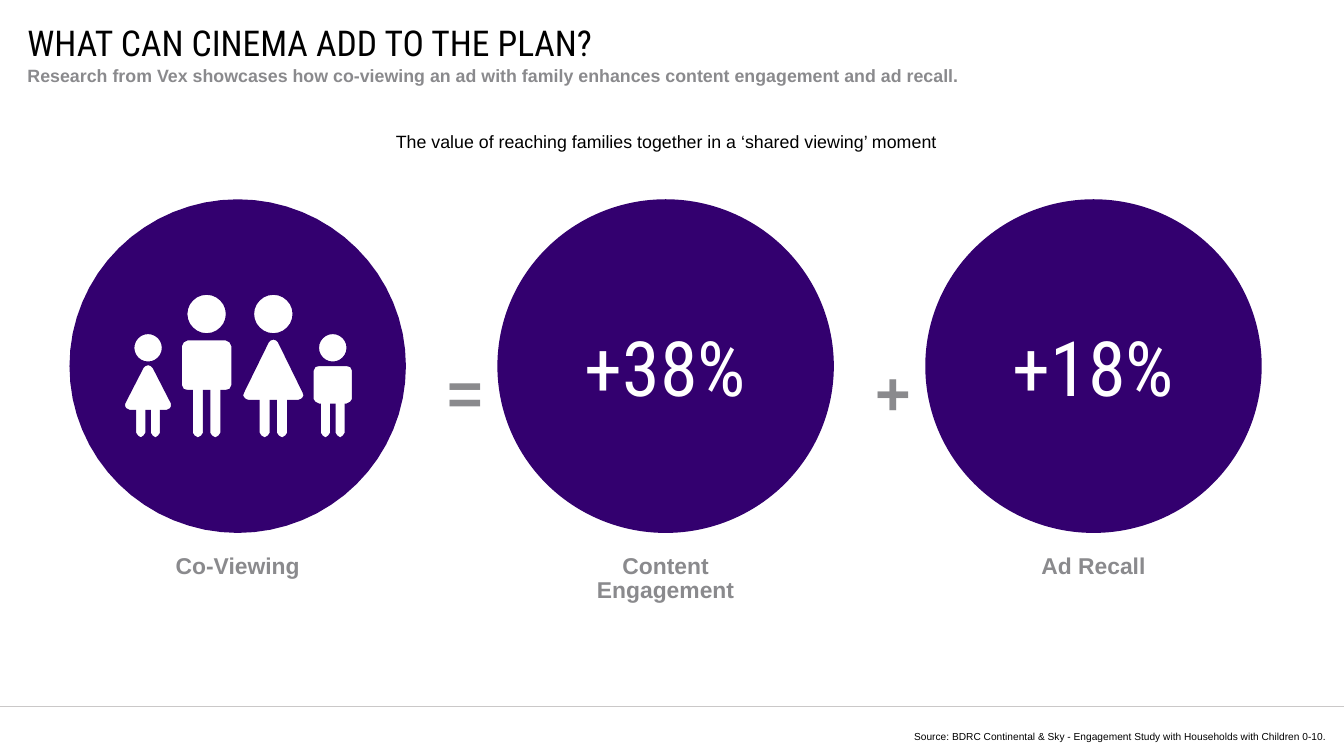
from dataclasses import dataclass
from math import cos, pi, sin

from lxml import etree
from pptx import Presentation
from pptx.dml.color import RGBColor
from pptx.enum.shapes import MSO_CONNECTOR, MSO_SHAPE
from pptx.enum.text import MSO_ANCHOR, MSO_AUTO_SIZE, PP_ALIGN
from pptx.oxml.ns import qn
from pptx.util import Inches, Pt

LEFT, CENTER, RIGHT = PP_ALIGN.LEFT, PP_ALIGN.CENTER, PP_ALIGN.RIGHT
TOP, MIDDLE = MSO_ANCHOR.TOP, MSO_ANCHOR.MIDDLE

# Content
TITLE = "WHAT CAN CINEMA ADD TO THE PLAN?"
SUBTITLE = ("Research from Vex showcases how co-viewing an ad with family "
            "enhances content engagement and ad recall.")
HEADING = "The value of reaching families together in a ‘shared viewing’ moment"
SOURCE = ("Source: BDRC Continental & Sky - Engagement Study with "
          "Households with Children 0-10.")
# Circle value (None: family symbol), label lines, sign that follows
COLUMNS = [
    (None, ["Co-Viewing"], "="),
    ("+38%", ["Content", "Engagement"], "+"),
    ("+18%", ["Ad Recall"], None),
]

# Family, in inches: half outlines are (distance from axis, height above feet)
SHIRT = [(0.21, 1.06), (0.25, 1.04), (0.27, 1.0), (0.27, 0.57),
         (0.25, 0.53), (0.21, 0.52)]
DRESS = [(0, 1.07), (0.03, 1.06), (0.05, 1.04), (0.32, 0.49), (0.33, 0.46),
         (0.32, 0.44), (0.3, 0.42), (0.27, 0.41)]
SMALL_SHIRT = [(0.15, 0.78), (0.19, 0.77), (0.21, 0.73), (0.21, 0.42),
               (0.19, 0.39), (0.15, 0.37)]
SMALL_DRESS = [(0, 0.79), (0.03, 0.78), (0.05, 0.76), (0.25, 0.37),
               (0.25, 0.34), (0.24, 0.32), (0.2, 0.3)]
ADULT_HEAD, CHILD_HEAD = (0.21, 1.35), (0.15, 0.98)  # radius, height
# Axis from circle centre, head, half outline, leg inner and outer edge
FAMILY = [
    (-0.98, CHILD_HEAD, SMALL_DRESS, 0.03, 0.13),
    (-0.34, ADULT_HEAD, SHIRT, 0.04, 0.15),
    (0.39, ADULT_HEAD, DRESS, 0.04, 0.15),
    (1.04, CHILD_HEAD, SMALL_SHIRT, 0.03, 0.13),
]
FEET = 0.78  # below circle centre


@dataclass(frozen=True)
class Theme:
    purple = RGBColor(0x33, 0x00, 0x6F)
    gray = RGBColor(0x8A, 0x8A, 0x8D)
    rule = RGBColor(0xCA, 0xC8, 0xC8)
    black = RGBColor(0, 0, 0)
    white = RGBColor(255, 255, 255)
    display = "Roboto Condensed"
    text = "Arial"
    title_size = 28
    body_size = 14
    label_size = 18
    value_size = 60
    sign_size = 48
    source_size = 8


THEME = Theme()

# Grid
WIDTH, HEIGHT = 14.7, 8.27
MARGIN = 0.3
FIRST_LEFT, PITCH = 0.76, 4.68
CIRCLE_TOP, CIRCLE_WIDTH, CIRCLE_HEIGHT = 2.18, 3.68, 3.65
LABEL_TOP, LABEL_WIDTH, LABEL_LINE = 6.02, 2.86, 0.3
SIGN_TOP, SIGN_WIDTH, SIGN_HEIGHT = 3.83, 0.28, 0.9
RULE_TOP = 7.73
UNITS = 1000  # freeform units per inch


def place(shape, left, top, width, height):
    shape.left, shape.top = Inches(left), Inches(top)
    shape.width, shape.height = Inches(width), Inches(height)


def write(shape, lines, size, color, font=THEME.text, bold=False, align=CENTER,
          anchor=TOP, spacing=None, inset=0):
    frame = shape.text_frame
    frame.text = "\n".join(lines)
    frame.word_wrap = True
    frame.auto_size = MSO_AUTO_SIZE.NONE
    frame.vertical_anchor = anchor
    frame.margin_left = frame.margin_right = Inches(inset)
    frame.margin_top = frame.margin_bottom = Inches(inset / 2)
    for paragraph in frame.paragraphs:
        paragraph.alignment = align
        paragraph.space_before = Pt(0)
        if spacing:
            paragraph.line_spacing = Pt(spacing)
        if shape.is_placeholder:
            properties = paragraph._p.get_or_add_pPr()
            properties.set("marL", "0")
            properties.set("indent", "0")
            etree.SubElement(properties, qn("a:buNone"))
        for run in paragraph.runs:
            run.font.name, run.font.size = font, Pt(size)
            run.font.bold, run.font.color.rgb = bold, color


def add_text(slide, box, lines, size, color, **style):
    shape = slide.shapes.add_textbox(*map(Inches, box))
    write(shape, lines, size, color, **style)


def fill_purple(shape):
    shape.shadow.inherit = False
    shape.fill.solid()
    shape.fill.fore_color.rgb = THEME.purple
    shape.line.fill.background()


def round_outline(x, y, radius_x, radius_y, count):
    angles = [2 * pi * step / count for step in range(count)]
    return [(x + radius_x * sin(a), y - radius_y * cos(a)) for a in angles]


def body_outline(axis, feet, half, inner, outer):
    """Add a rounded leg to the half outline and mirror it at the axis."""
    hip = half[-1][1]
    leg = [(outer, hip), (outer, 0.05), (outer - 0.02, 0.02),
           ((inner + outer) / 2, 0), (inner + 0.02, 0.02), (inner, 0.05),
           (inner, hip)]
    right = half + leg
    mirrored = [(-x, y) for x, y in reversed(right)]
    return [(axis + x, feet - y) for x, y in right + mirrored]


def add_family_circle(slide, left):
    """Draw the circle as one shape with the four figures cut out of it."""
    x, y = left + CIRCLE_WIDTH / 2, CIRCLE_TOP + CIRCLE_HEIGHT / 2
    feet = y + FEET
    outlines = [round_outline(x, y, CIRCLE_WIDTH / 2, CIRCLE_HEIGHT / 2, 64)]
    for offset, (radius, height), half, inner, outer in FAMILY:
        axis = x + offset
        outlines.append(round_outline(axis, feet - height, radius, radius, 24))
        outlines.append(body_outline(axis, feet, half, inner, outer))
    scaled = [[(px * UNITS, py * UNITS) for px, py in outline]
              for outline in outlines]
    builder = slide.shapes.build_freeform(*scaled[0][0], scale=Inches(1) / UNITS)
    for number, outline in enumerate(scaled):
        if number:
            builder.move_to(*outline[0])
        builder.add_line_segments(outline[1:], close=True)
    fill_purple(builder.convert_to_shape())


def add_value_circle(slide, left, value):
    circle = slide.shapes.add_shape(
        MSO_SHAPE.OVAL, Inches(left), Inches(CIRCLE_TOP),
        Inches(CIRCLE_WIDTH), Inches(CIRCLE_HEIGHT))
    fill_purple(circle)
    write(circle, [value], THEME.value_size, THEME.white, font=THEME.display,
          anchor=MIDDLE)


def add_rule(slide):
    rule = slide.shapes.add_connector(
        MSO_CONNECTOR.STRAIGHT, 0, Inches(RULE_TOP), Inches(WIDTH), Inches(RULE_TOP))
    rule.line.color.rgb, rule.line.width = THEME.rule, Pt(0.5)
    etree.SubElement(rule._element.spPr, qn("a:effectLst"))


def main():
    presentation = Presentation()
    presentation.slide_width, presentation.slide_height = Inches(WIDTH), Inches(HEIGHT)
    slide = presentation.slides.add_slide(presentation.slide_layouts[3])
    title, subtitle, source = slide.placeholders
    add_rule(slide)

    place(title, MARGIN, 0.3, 13.58, 0.32)
    write(title, [TITLE], THEME.title_size, THEME.black, font=THEME.display,
          align=LEFT, anchor=MIDDLE)
    place(subtitle, MARGIN, 0.73, 13.58, 0.48)
    write(subtitle, [SUBTITLE], THEME.body_size, THEME.gray, bold=True,
          align=LEFT, spacing=15)
    place(source, 9.35, 7.93, 5.16, 0.13)
    write(source, [SOURCE], THEME.source_size, THEME.black, align=RIGHT,
          anchor=MIDDLE, spacing=19)
    add_text(slide, (1.2, 1.45, 12.18, 0.48), [HEADING], THEME.body_size,
             THEME.black, spacing=15)

    for column, (value, label, sign) in enumerate(COLUMNS):
        left = FIRST_LEFT + column * PITCH
        if value:
            add_value_circle(slide, left, value)
        else:
            add_family_circle(slide, left)
        label_left = left + (CIRCLE_WIDTH - LABEL_WIDTH) / 2
        add_text(slide, (label_left, LABEL_TOP, LABEL_WIDTH, LABEL_LINE * len(label)),
                 label, THEME.label_size, THEME.gray, bold=True, spacing=19, inset=0.1)
        if sign:
            sign_left = left + (CIRCLE_WIDTH + PITCH - SIGN_WIDTH) / 2
            add_text(slide, (sign_left, SIGN_TOP, SIGN_WIDTH, SIGN_HEIGHT), [sign],
                     THEME.sign_size, THEME.gray, bold=True, inset=0.1)

    presentation.save("out.pptx")


if __name__ == "__main__":
    main()
